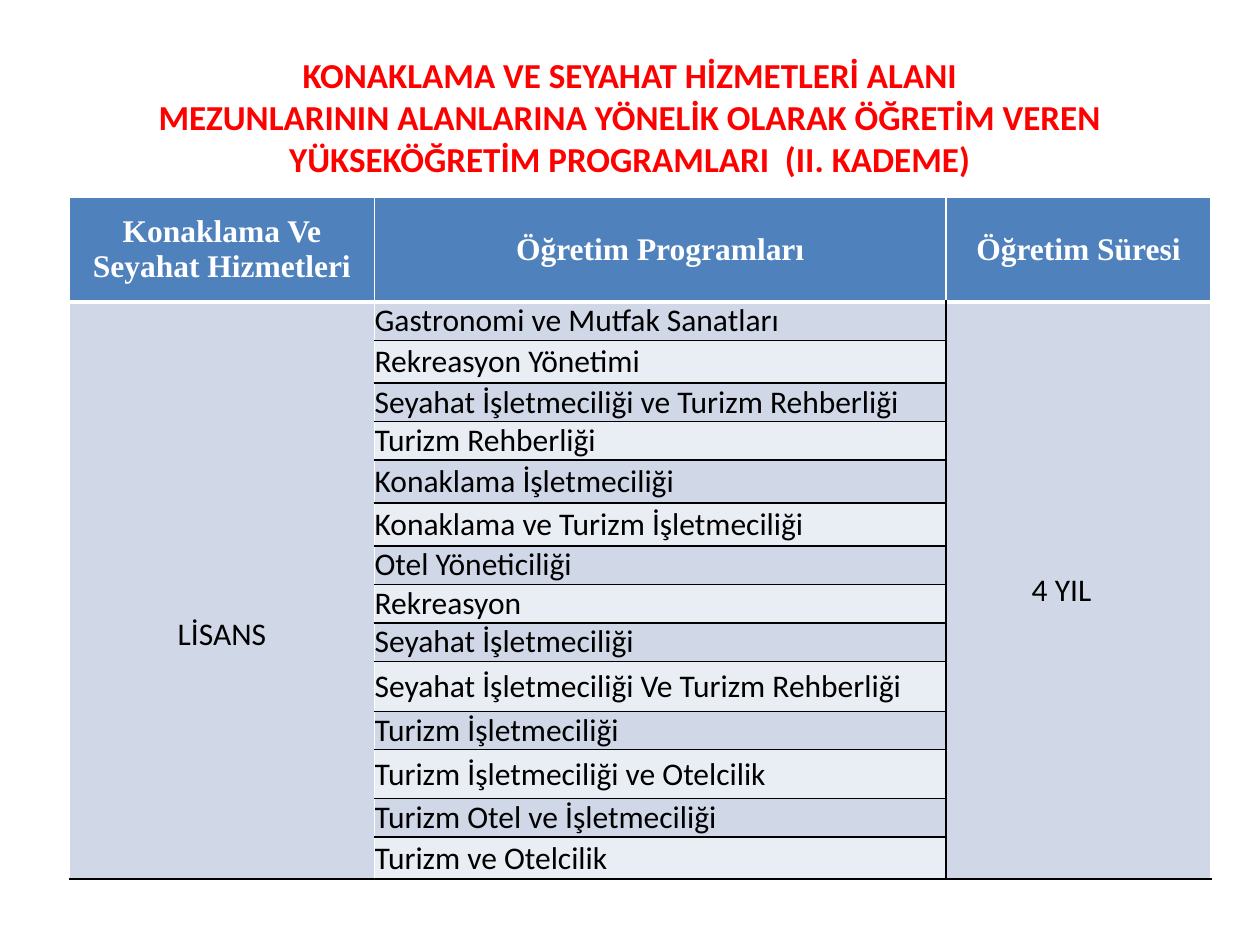
from lxml import etree
from pptx import Presentation
from pptx.dml.color import RGBColor
from pptx.enum.text import MSO_ANCHOR, PP_ALIGN
from pptx.oxml.ns import qn
from pptx.util import Pt

CENTER, LEFT = PP_ALIGN.CENTER, PP_ALIGN.LEFT
MIDDLE = MSO_ANCHOR.MIDDLE
TITLE_ONLY = 5

RED = RGBColor(0xFF, 0x00, 0x00)
WHITE = RGBColor(0xFF, 0xFF, 0xFF)
BLACK = RGBColor(0x00, 0x00, 0x00)
HEADER_BLUE = RGBColor(0x4F, 0x81, 0xBD)
DARK_BAND = RGBColor(0xD0, 0xD8, 0xE8)
LIGHT_BAND = RGBColor(0xE9, 0xED, 0xF4)

TITLE = (
    "KONAKLAMA VE SEYAHAT HİZMETLERİ ALANI\v"
    "MEZUNLARININ ALANLARINA YÖNELİK OLARAK ÖĞRETİM VEREN "
    "YÜKSEKÖĞRETİM PROGRAMLARI  (II. KADEME)"
)
HEADERS = ("Konaklama Ve Seyahat Hizmetleri", "Öğretim Programları", "Öğretim Süresi")
DEGREE = "LİSANS"
DURATION = "4 YIL"
PROGRAMS = (
    ("Gastronomi ve Mutfak Sanatları", 22),
    ("Rekreasyon Yönetimi", 24.5),
    ("Seyahat İşletmeciliği ve Turizm Rehberliği", 22),
    ("Turizm Rehberliği", 22),
    ("Konaklama İşletmeciliği", 24.5),
    ("Konaklama ve Turizm İşletmeciliği", 24.5),
    ("Otel Yöneticiliği", 22),
    ("Rekreasyon", 22),
    ("Seyahat İşletmeciliği", 22),
    ("Seyahat İşletmeciliği Ve Turizm Rehberliği", 28.5),
    ("Turizm İşletmeciliği", 22),
    ("Turizm İşletmeciliği ve Otelcilik", 28),
    ("Turizm Otel ve İşletmeciliği", 22),
    ("Turizm ve Otelcilik", 24),
)
HEADER_HEIGHT = 60
COLUMN_WIDTHS = (174.5, 326.5, 151.5)


def set_font(para, name, size, color, bold):
    """Format a whole paragraph."""
    font = para.font
    font.name, font.size, font.bold = name, Pt(size), bold
    font.color.rgb = color


def set_borders(cell, left, top, right, bottom):
    """Draw the four cell edges, each given as a colour and a width in points."""
    properties = cell._tc.get_or_add_tcPr()
    edges = zip(("a:lnL", "a:lnR", "a:lnT", "a:lnB"), (left, right, top, bottom))
    for tag, (color, width) in edges:
        line = etree.SubElement(properties, qn(tag), w=str(Pt(width)))
        fill = etree.SubElement(line, qn("a:solidFill"))
        etree.SubElement(fill, qn("a:srgbClr"), val=str(color))


def style_cell(cell, fill, borders):
    """Give a cell its edges, fill and empty margins."""
    set_borders(cell, *borders)
    cell.fill.solid()
    cell.fill.fore_color.rgb = fill
    cell.vertical_anchor = MIDDLE
    cell.margin_left = cell.margin_right = cell.margin_top = cell.margin_bottom = 0


def write_cell(cell, text, align, name="Calibri", color=BLACK, bold=False):
    """Write one formatted paragraph into a cell."""
    cell.text = text
    para = cell.text_frame.paragraphs[0]
    para.alignment = align
    set_font(para, name, 18, color, bold)


def add_title(page, left, top, width, height):
    """Place the red heading in the title placeholder."""
    box = page.shapes.title
    box.left, box.top, box.width, box.height = Pt(left), Pt(top), Pt(width), Pt(height)
    frame = box.text_frame
    frame.text = TITLE
    frame.word_wrap = True
    frame.vertical_anchor = MIDDLE
    para = frame.paragraphs[0]
    para.alignment = CENTER
    set_font(para, "Calibri", 20, RED, True)


def add_program_table(page, left, top):
    """Build the table of degree, programmes and duration."""
    heights = [HEADER_HEIGHT] + [height for _, height in PROGRAMS]
    table = page.shapes.add_table(
        len(heights), len(COLUMN_WIDTHS), Pt(left), Pt(top),
        Pt(sum(COLUMN_WIDTHS)), Pt(sum(heights)),
    ).table
    for column, width in zip(table.columns, COLUMN_WIDTHS):
        column.width = Pt(width)
    for row, height in zip(table.rows, heights):
        row.height = Pt(height)

    white, black, thick = (WHITE, 1), (BLACK, 1), (WHITE, 3)
    for index, text in enumerate(HEADERS):
        cell = table.cell(0, index)
        style_cell(cell, HEADER_BLUE, (white, white, white, thick))
        write_cell(cell, text, CENTER, "Times New Roman", WHITE, True)

    for number, (program, _) in enumerate(PROGRAMS, 1):
        upper = thick if number == 1 else black
        band = DARK_BAND if number % 2 else LIGHT_BAND
        degree, name, duration = (table.cell(number, index) for index in range(3))
        style_cell(degree, DARK_BAND, (white, upper, white, black))
        style_cell(name, band, (white, upper, black, black))
        style_cell(duration, DARK_BAND, (black, upper, white, black))
        write_cell(name, program, LEFT)

    for index in (0, 2):
        table.cell(1, index).merge(table.cell(len(PROGRAMS), index))
    degree, duration = table.cell(1, 0), table.cell(1, 2)
    write_cell(degree, DEGREE, CENTER)
    degree.margin_top = Pt(51)
    write_cell(duration, DURATION, LEFT)
    duration.margin_left = Pt(49)


def main():
    """Build and save the deck."""
    deck = Presentation()
    deck.slide_width, deck.slide_height = Pt(720), Pt(540)
    page = deck.slides.add_slide(deck.slide_layouts[TITLE_ONLY])
    add_title(page, 36, 21.6, 648, 90)
    add_program_table(page, 39.6, 112.5)
    deck.save("out.pptx")


if __name__ == "__main__":
    main()
